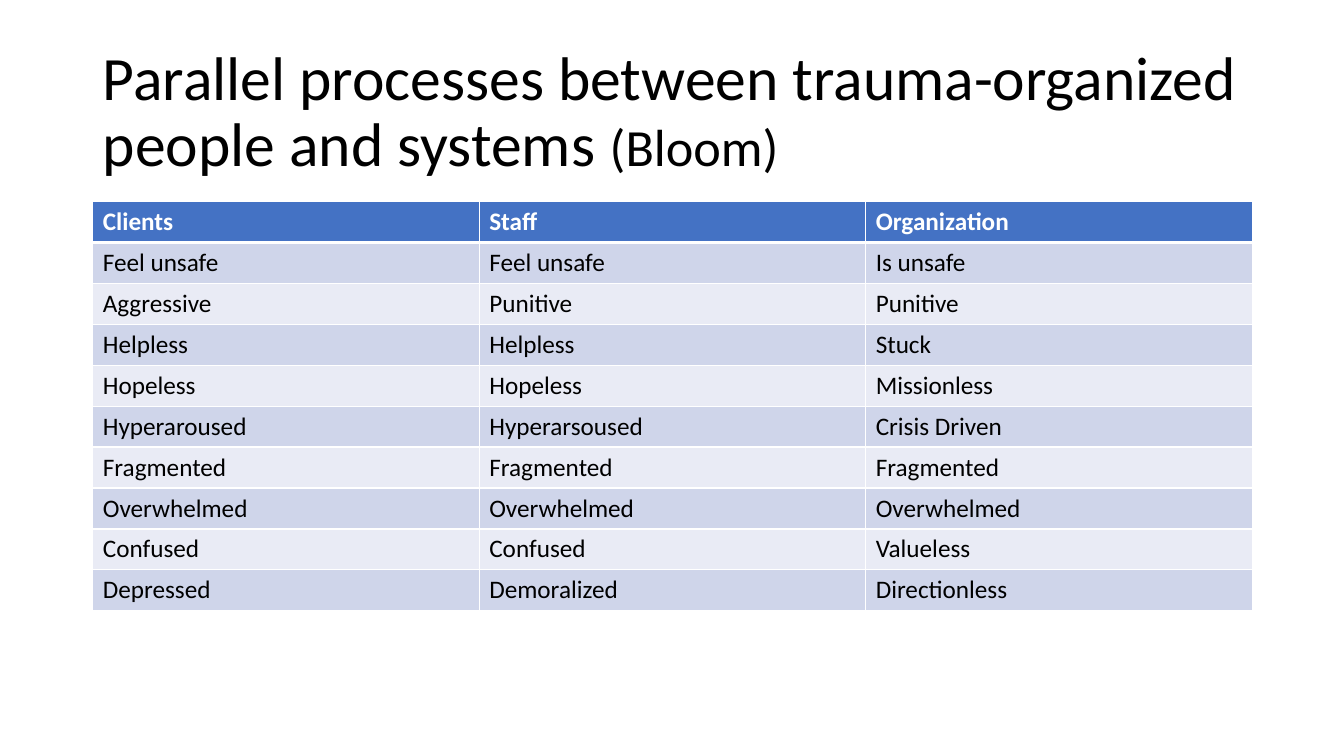
from lxml.etree import SubElement
from pptx import Presentation
from pptx.dml.color import RGBColor
from pptx.enum.text import MSO_ANCHOR, PP_ALIGN
from pptx.oxml.ns import qn
from pptx.util import Inches, Pt

TITLE = "Parallel processes between trauma-organized people and systems "
AUTHOR = "(Bloom)"
ROWS = [
    ("Clients", "Staff", "Organization"),
    ("Feel unsafe", "Feel unsafe", "Is unsafe"),
    ("Aggressive", "Punitive", "Punitive"),
    ("Helpless", "Helpless", "Stuck"),
    ("Hopeless", "Hopeless", "Missionless"),
    ("Hyperaroused", "Hyperarsoused", "Crisis Driven"),
    ("Fragmented", "Fragmented", "Fragmented"),
    ("Overwhelmed", "Overwhelmed", "Overwhelmed"),
    ("Confused", "Confused", "Valueless"),
    ("Depressed", "Demoralized", "Directionless"),
]

FONT = "Calibri"
BLACK = RGBColor(0x00, 0x00, 0x00)
WHITE = RGBColor(0xFF, 0xFF, 0xFF)
BLUE = RGBColor(0x44, 0x72, 0xC4)
BANDS = [RGBColor(0xE9, 0xEB, 0xF5), RGBColor(0xCF, 0xD5, 0xEA)]

LEFT, WIDTH = Inches(0.92), Inches(11.5)
TABLE_TOP, TABLE_HEIGHT = Inches(2), Inches(4.06)


def add_borders(cell, top, bottom):
    """Draw white lines round a cell; top and bottom are widths in points."""
    props = cell._tc.get_or_add_tcPr()
    for side, width in (("L", 1), ("R", 1), ("T", top), ("B", bottom)):
        line = SubElement(props, qn(f"a:ln{side}"), w=str(Pt(width)))
        fill = SubElement(line, qn("a:solidFill"))
        SubElement(fill, qn("a:srgbClr"), val=str(WHITE))


def add_title(slide):
    title = slide.shapes.title
    title.left, title.top = LEFT, Inches(0.4)
    title.width, title.height = WIDTH, Inches(1.45)
    frame = title.text_frame
    frame.word_wrap = True
    frame.vertical_anchor = MSO_ANCHOR.MIDDLE
    para = frame.paragraphs[0]
    para.alignment = PP_ALIGN.LEFT
    para.line_spacing = 0.9
    para.font.name = FONT
    para.font.color.rgb = BLACK
    for text, size in ((TITLE, 44), (AUTHOR, 37.3)):
        run = para.add_run()
        run.text = text
        run.font.size = Pt(size)


def add_grid(slide):
    count = len(ROWS)
    table = slide.shapes.add_table(
        count, len(ROWS[0]), LEFT, TABLE_TOP, WIDTH, TABLE_HEIGHT).table
    for r, texts in enumerate(ROWS):
        head = r == 0
        for c, text in enumerate(texts):
            cell = table.cell(r, c)
            add_borders(cell, 3 if r == 1 else 1, 3 if head else 1)
            cell.fill.solid()
            cell.fill.fore_color.rgb = BLUE if head else BANDS[r % 2]
            cell.text = text
            font = cell.text_frame.paragraphs[0].font
            font.name, font.size, font.bold = FONT, Pt(18), head
            font.color.rgb = WHITE if head else BLACK


def main():
    deck = Presentation()
    deck.slide_width, deck.slide_height = Inches(13.33), Inches(7.5)
    slide = deck.slides.add_slide(deck.slide_layouts[5])
    add_title(slide)
    add_grid(slide)
    deck.save("out.pptx")


if __name__ == "__main__":
    main()
